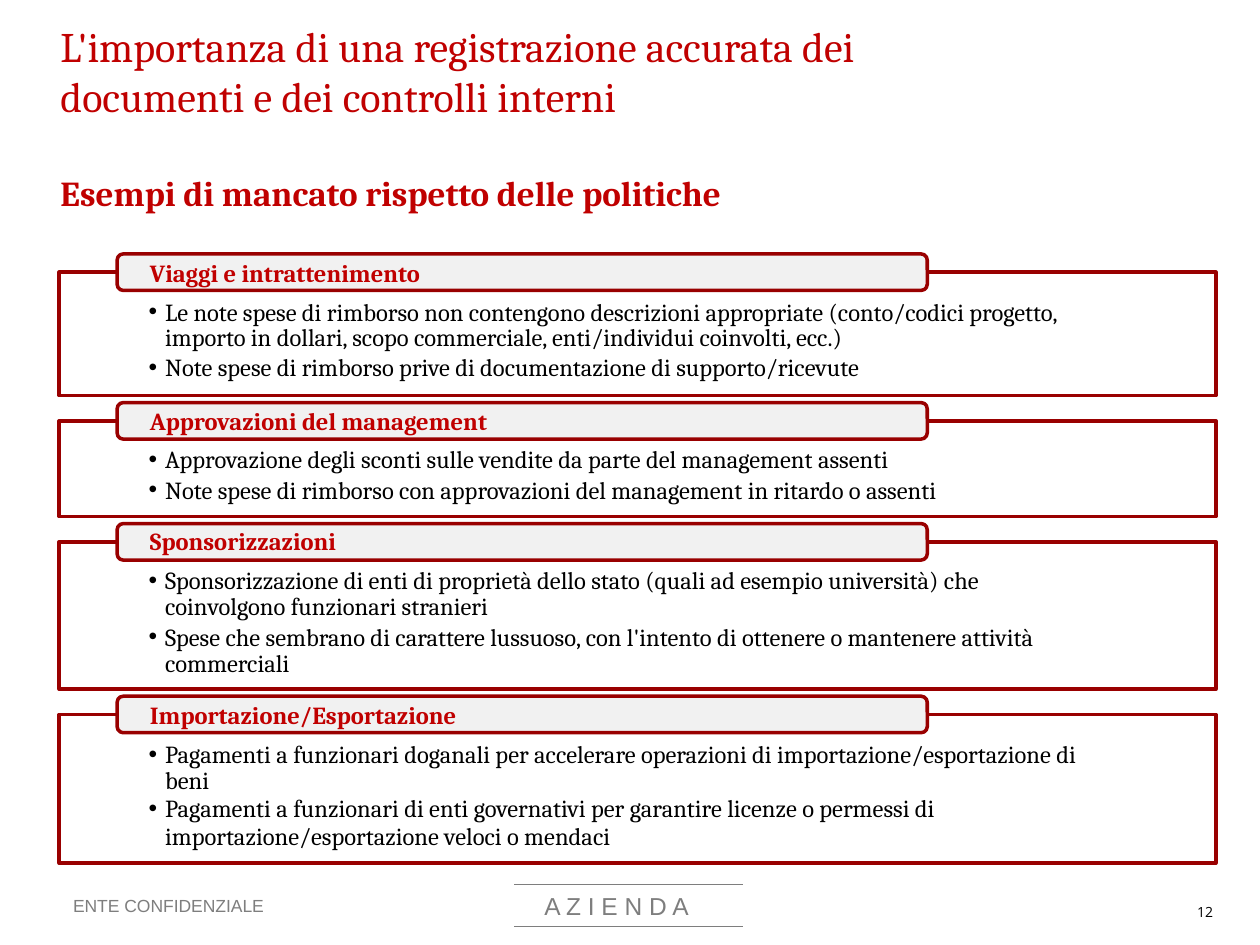
from lxml import etree
from pptx import Presentation, util as u
from pptx.dml.color import RGBColor
from pptx.enum import shapes, text
from pptx.oxml import ns

RED, EDGE, GREY, PALE, BLACK = "C00000", "990000", "7E7E7E", "F1F1F1", "000000"
LEFT, WIDE, TOP, GAP = 0.47, 9.18, 2.16, 0.2
TAG_X, TAG_W, TAG_H = 0.93, 6.43, 0.29

GROUPS = [
    (0.98, "Viaggi e intrattenimento", 25.2, [
        ("Le note spese di rimborso non contengono descrizioni appropriate (conto/codici progetto, "
         "importo in dollari, scopo commerciale, enti/individui coinvolti, ecc.)", 7.5, 14.8),
        ("Note spese di rimborso prive di documentazione di supporto/ricevute", 0.2, None)]),
    (0.76, "Approvazioni del management", 13.7, [
        ("Approvazione degli sconti sulle vendite da parte del management assenti", 5.3, None),
        ("Note spese di rimborso con approvazioni del management in ritardo o assenti", 0.5, None)]),
    (1.17, "Sponsorizzazioni", 12.8, [
        ("Sponsorizzazione di enti di proprietà dello stato (quali ad esempio università) che "
         "coinvolgono funzionari stranieri", 7.5, 14.8),
        ("Spese che sembrano di carattere lussuoso, con l'intento di ottenere o mantenere attività "
         "commerciali", 2.5, 14.8)]),
    (1.18, "Importazione/Esportazione", 13.2, [
        ("Pagamenti a funzionari doganali per accelerare operazioni di importazione/esportazione di "
         "beni", 7.5, 14.8),
        ("Pagamenti a funzionari di enti governativi per garantire licenze o permessi di "
         "importazione/esportazione veloci o mendaci", 0.3, 15.8)]),
]


def rgb(code):
    """Turn a hex string into a colour."""
    return RGBColor.from_string(code)


def box(*sides):
    """Turn inches into lengths."""
    return [u.Inches(side) for side in sides]


def frame(shape, right=0, top=0):
    """Set up a text frame with tight insets and return it."""
    area = shape.text_frame
    area.auto_size = text.MSO_AUTO_SIZE.NONE
    area.word_wrap = True
    area.vertical_anchor = text.MSO_ANCHOR.TOP
    area.margin_left = area.margin_bottom = 0
    area.margin_right, area.margin_top = box(right, top)
    return area


def write(para, words, size, color, face="Cambria", bold=False, before=0, line=None,
          indent=0.0, hang=0.0):
    """Fill one paragraph, with a bullet when it hangs."""
    para.text = words
    para.alignment = text.PP_ALIGN.LEFT
    para.space_before = u.Pt(before)
    para.line_spacing = u.Pt(line) if line else 1.0
    props = para._p.get_or_add_pPr()
    props.set("marL", str(u.Inches(indent)))
    props.set("indent", str(u.Inches(-hang)))
    mark = etree.SubElement(props, ns.qn("a:buChar" if hang else "a:buNone"))
    if hang:
        mark.set("char", "•")
    font = para.font
    font.name, font.size, font.bold = face, u.Pt(size), bold
    font.color.rgb = rgb(color)


def label(slide, place, words, size, color, face):
    """Add a one-line text box."""
    area = frame(slide.shapes.add_textbox(*box(*place)))
    write(area.paragraphs[0], words, size, color, face)


def block(slide, kind, place, fill=None):
    """Add a red-edged shape."""
    shape = slide.shapes.add_shape(kind, *box(*place))
    shape.shadow.inherit = False
    shape.line.color.rgb, shape.line.width = rgb(EDGE), u.Pt(2)
    if fill:
        shape.fill.solid()
        shape.fill.fore_color.rgb = rgb(fill)
    else:
        shape.fill.background()
    return shape


def rule(slide, y):
    """Add a thin grey line in the footer."""
    line = slide.shapes.add_connector(shapes.MSO_CONNECTOR.STRAIGHT, *box(4.08, y, 5.9, y))
    line.line.color.rgb, line.line.width = rgb(GREY), u.Pt(0.5)
    etree.SubElement(line._element.spPr, ns.qn("a:effectLst"))


def panels(slide):
    """Stack the panels, each with a tag on its top edge."""
    y = TOP
    for high, *_ in GROUPS:
        block(slide, shapes.MSO_SHAPE.RECTANGLE, (LEFT, y, WIDE, high))
        tag = block(slide, shapes.MSO_SHAPE.ROUNDED_RECTANGLE,
                    (TAG_X, y - TAG_H / 2, TAG_W, TAG_H), PALE)
        tag.adjustments[0] = 0.17
        y += high + GAP


def place(shape, *sides):
    """Move a placeholder and bring it to the front."""
    shape.left, shape.top, shape.width, shape.height = box(*sides)
    shape.element.getparent().append(shape.element)


def lists(shape):
    """Write the subtitle, headings and bullets."""
    area = frame(shape, right=0.3, top=0.02)
    write(area.paragraphs[0], "Esempi di mancato rispetto delle politiche", 20, RED, bold=True)
    for _, head, gap, items in GROUPS:
        write(area.add_paragraph(), head, 14, RED, bold=True, before=gap, indent=0.71)
        for words, before, line in items:
            write(area.add_paragraph(), words, 14, BLACK, before=before, line=line,
                  indent=0.83, hang=0.13)


def main():
    """Build the slide and save it."""
    deck = Presentation()
    deck.slide_width, deck.slide_height = box(10, 7.5)
    slide = deck.slides.add_slide(deck.slide_layouts[1])
    title, body = slide.placeholders
    for y in (7.02, 7.35):
        rule(slide, y)
    panels(slide)
    place(body, 0.48, 1.34, 8.41, 5.4)
    lists(body)
    place(title, 0.48, 0.14, 7.13, 0.83)
    write(frame(title, top=0.02).paragraphs[0],
          "L'importanza di una registrazione accurata dei documenti e dei controlli interni", 24, RED)
    label(slide, (4.32, 7.07, 1.4, 0.25), "A Z I E N D A", 14, GREY, "Arial")
    label(slide, (0.58, 7.1, 1.6, 0.18), "ENTE CONFIDENZIALE", 10, GREY, "Arial")
    label(slide, (9.5, 7.17, 0.22, 0.15), "12", 8, BLACK, "Open Sans")
    deck.save("out.pptx")


if __name__ == "__main__":
    main()
